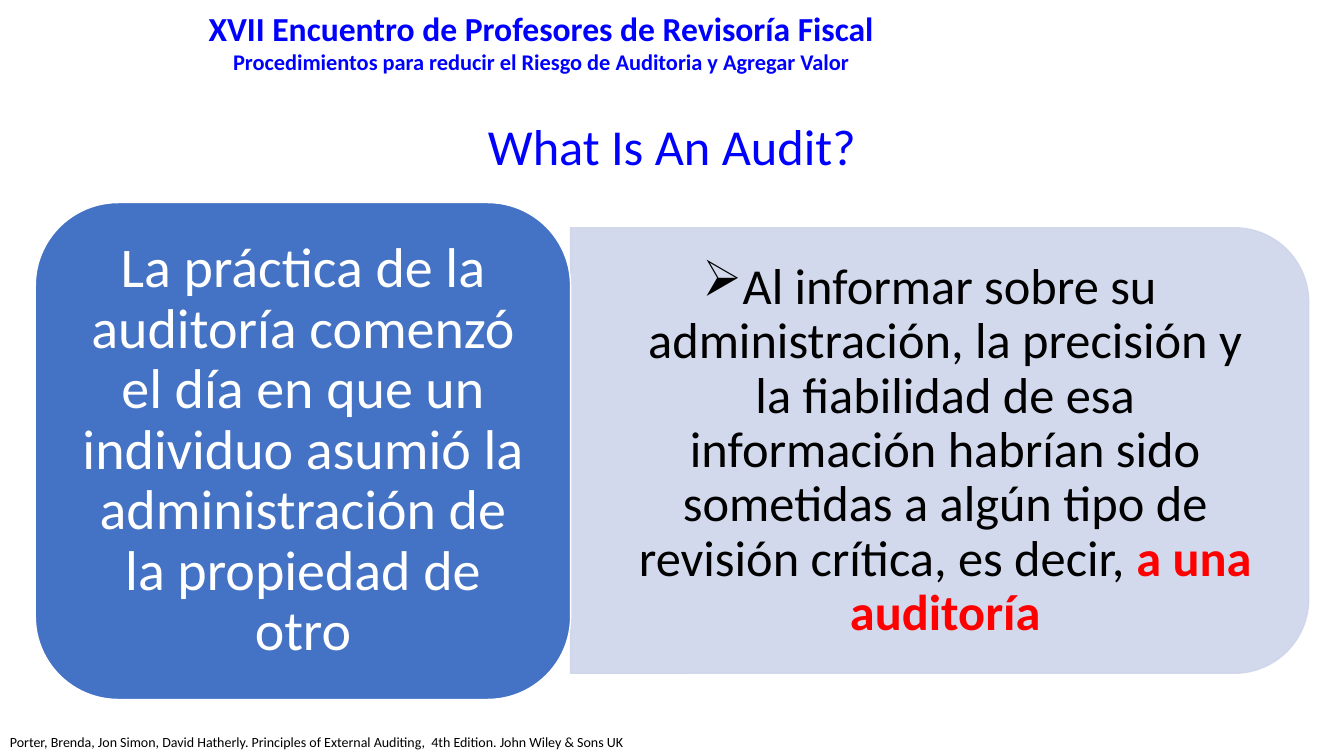
from lxml import etree
from pptx import Presentation
from pptx.dml.color import RGBColor
from pptx.enum.shapes import MSO_SHAPE
from pptx.enum.text import MSO_ANCHOR, PP_ALIGN
from pptx.oxml.ns import qn
from pptx.util import Emu, Inches, Pt

BLUE = RGBColor(0x00, 0x00, 0xFF)
BLOCK_BLUE = RGBColor(0x44, 0x72, 0xC4)
PANEL_LAVENDER = RGBColor(0xCF, 0xD5, 0xEA)
RED = RGBColor(0xFF, 0x00, 0x00)
BLACK = RGBColor(0x00, 0x00, 0x00)
WHITE = RGBColor(0xFF, 0xFF, 0xFF)

LEFT, CENTER = PP_ALIGN.LEFT, PP_ALIGN.CENTER
TOP, MIDDLE = MSO_ANCHOR.TOP, MSO_ANCHOR.MIDDLE
ROUNDED = MSO_SHAPE.ROUNDED_RECTANGLE
TWO_ROUNDED = MSO_SHAPE.ROUND_2_SAME_RECTANGLE
TITLE_ONLY = 5


class SlideBuilder:
    """Adds styled elements; every area is left, top, width, height in percent of the slide."""

    font_name = "Calibri"

    def __init__(self, deck):
        self.deck = deck
        self.page = deck.slides.add_slide(deck.slide_layouts[TITLE_ONLY])

    def area(self, left, top, width, height):
        across, down = self.deck.slide_width / 100, self.deck.slide_height / 100
        return [Emu(round(length)) for length in
                (left * across, top * down, width * across, height * down)]

    def frame(self, shape, anchor=TOP, insets=(0.1, 0.05)):
        """Prepares a text frame with horizontal and vertical insets in inches."""
        frame = shape.text_frame
        frame.word_wrap = True
        frame.vertical_anchor = anchor
        frame.margin_left = frame.margin_right = Inches(insets[0])
        frame.margin_top = frame.margin_bottom = Inches(insets[1])
        return frame

    def paragraph(self, para, text, size, color, bold=False, align=CENTER, spacing=1.0):
        para.text = text
        para.alignment = align
        para.line_spacing = spacing
        self.style(para.runs[0], size, color, bold)

    def style(self, span, size, color, bold):
        span.font.name = self.font_name
        span.font.size = Pt(size)
        span.font.bold = bold
        span.font.color.rgb = color

    def title(self, text, area):
        box = self.page.shapes.title
        box.left, box.top, box.width, box.height = self.area(*area)
        self.paragraph(self.frame(box).paragraphs[0], text, 36, BLUE)

    def text_box(self, area, anchor=TOP, insets=(0.1, 0.05)):
        return self.frame(self.page.shapes.add_textbox(*self.area(*area)), anchor, insets)

    def block(self, kind, area, fill, line, quarter_turn=False):
        """Adds a filled shape; a quarter turn keeps the area as it is seen."""
        left, top, width, height = self.area(*area)
        if quarter_turn:
            shift = (width - height) // 2
            left, top, width, height = left + shift, top - shift, height, width
        shape = self.page.shapes.add_shape(kind, left, top, width, height)
        shape.rotation = 90 if quarter_turn else 0
        shape.shadow.inherit = False
        shape.fill.solid()
        shape.fill.fore_color.rgb = fill
        shape.line.color.rgb = line
        shape.line.width = Pt(1)
        return shape

    def fade(self, shape, percent):
        """Sets the opacity of fill and line."""
        for color in shape._element.spPr.iter(qn("a:srgbClr")):
            etree.SubElement(color, qn("a:alpha"), val=str(percent * 1000))

    def bullet(self, para, mark, indent):
        properties = para._p.get_or_add_pPr()
        properties.set("marL", str(Inches(indent)))
        properties.set("indent", str(-Inches(indent)))
        etree.SubElement(properties, qn("a:buChar"), char=mark)


def main():
    deck = Presentation()
    deck.slide_width, deck.slide_height = Inches(13.33), Inches(7.5)
    builder = SlideBuilder(deck)

    header = builder.text_box((14.55, 0.4, 51.45, 10.27))
    builder.paragraph(header.paragraphs[0], "XVII Encuentro de Profesores de Revisoría Fiscal",
                      24, BLUE, bold=True)
    builder.paragraph(header.add_paragraph(),
                      "Procedimientos para reducir el Riesgo de Auditoria y Agregar Valor",
                      16, BLUE, bold=True)

    builder.title("What Is An Audit?", (12.5, 14.53, 75, 9.47))

    source = builder.text_box((0, 96.4, 54.83, 3.6))
    builder.paragraph(source.paragraphs[0],
                      "Porter, Brenda, Jon Simon, David Hatherly. Principles of External Auditing,  "
                      "4th Edition. John Wiley & Sons UK", 10, BLACK, align=LEFT)

    panel = builder.block(TWO_ROUNDED, (42.46, 30.13, 54.91, 58.93),
                          PANEL_LAVENDER, PANEL_LAVENDER, quarter_turn=True)
    builder.fade(panel, 90)
    report = builder.text_box((42.54, 33.07, 53.26, 53.2), MIDDLE, (0.27, 0.14))
    para = report.paragraphs[0]
    builder.paragraph(para, "Al informar sobre su administración, la precisión y la fiabilidad de esa "
                      "información habrían sido sometidas a algún tipo de revisión crítica, es decir, ",
                      36, BLACK, spacing=0.9)
    builder.bullet(para, "➢", 0.31)
    emphasis = para.add_run()
    emphasis.text = "a una auditoría"
    builder.style(emphasis, 36, RED, bold=True)

    origin = builder.block(ROUNDED, (2.63, 26.8, 39.83, 65.73), BLOCK_BLUE, WHITE)
    builder.paragraph(builder.frame(origin, MIDDLE, (0.17, 0.08)).paragraphs[0],
                      "La práctica de la auditoría comenzó el día en que un individuo asumió la "
                      "administración de la propiedad de otro", 40, WHITE, spacing=0.9)

    deck.save("out.pptx")


if __name__ == "__main__":
    main()
